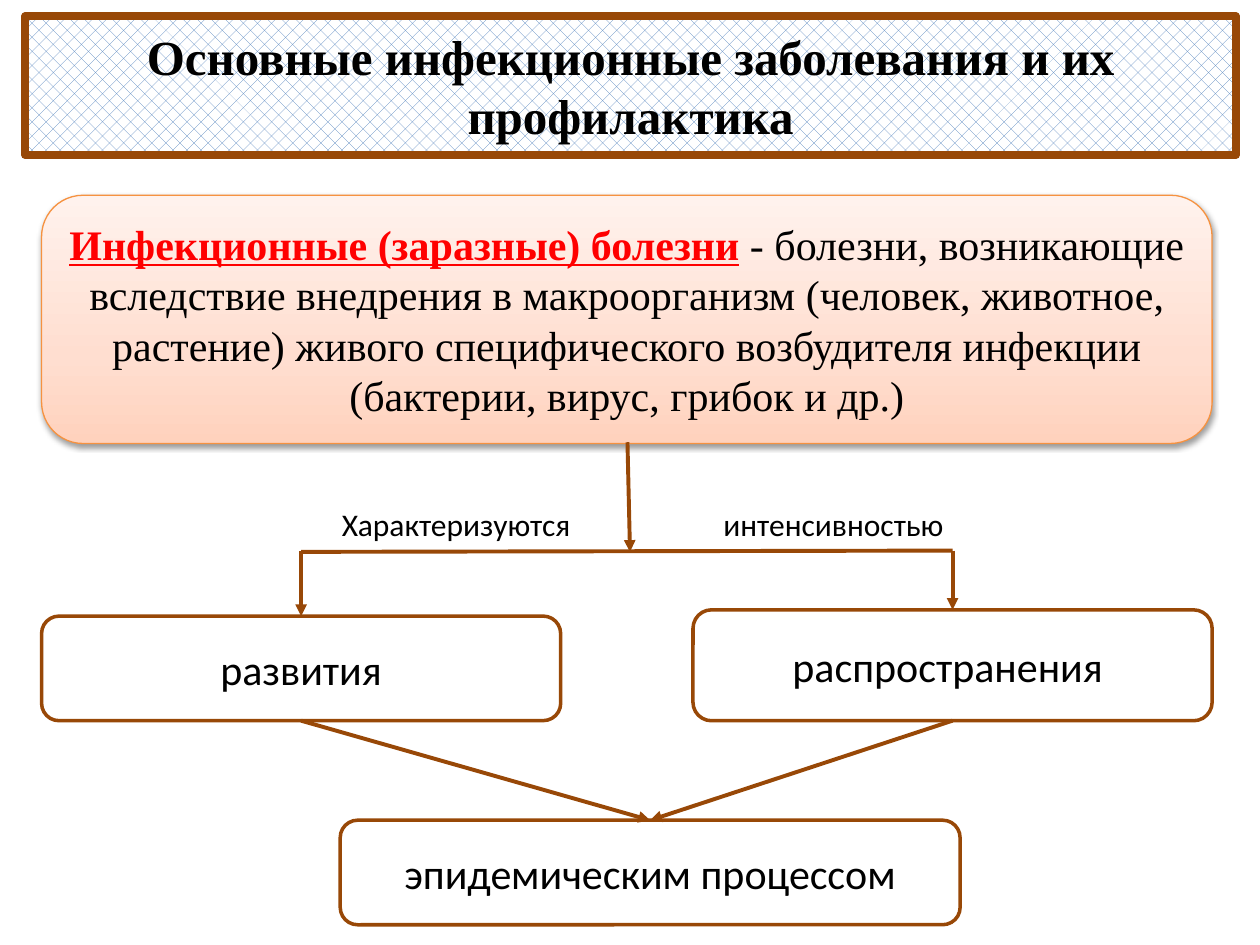
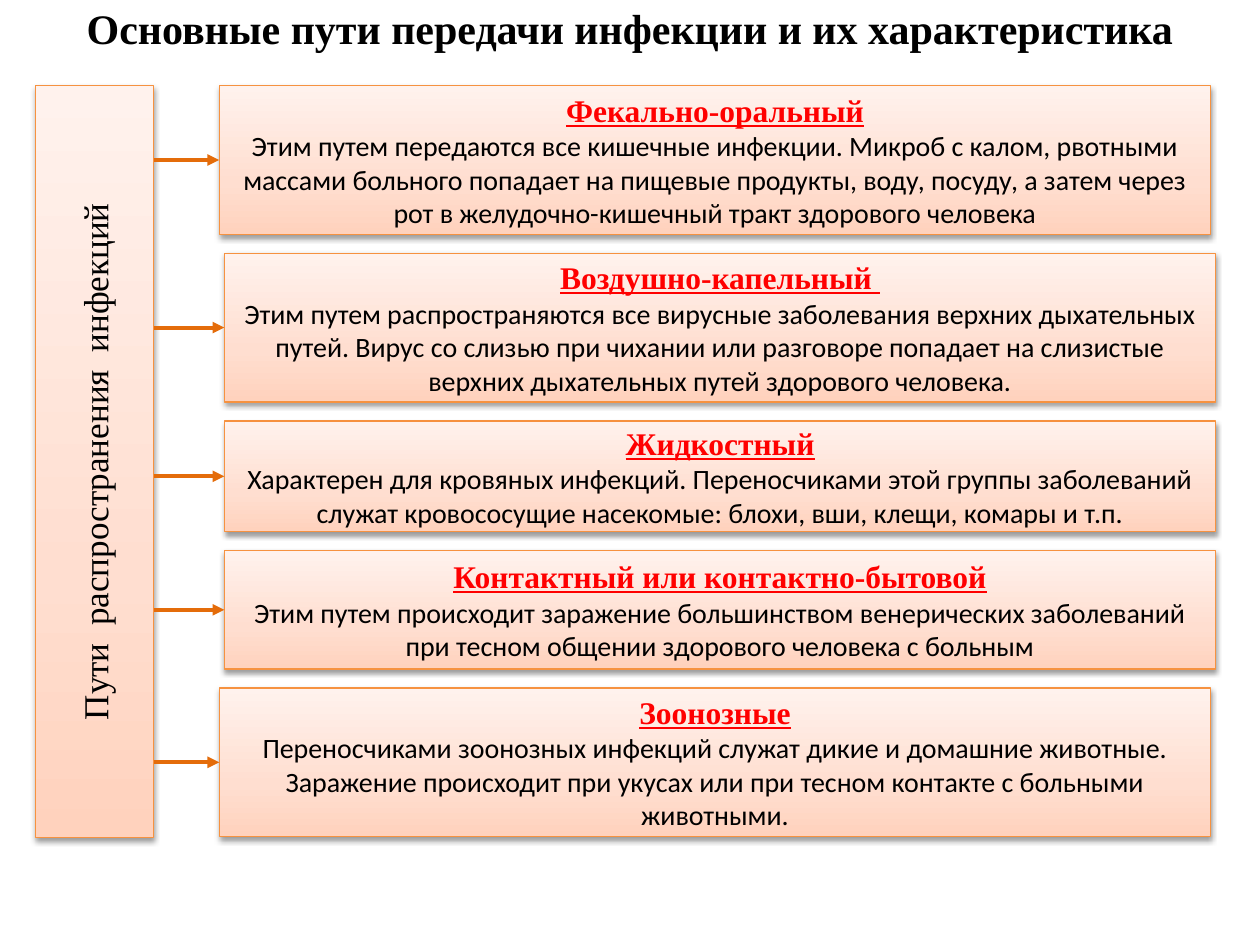
import copy
import pptx
import pptx.util
import pptx.dml.color
import pptx.enum.dml
import pptx.enum.shapes
import pptx.enum.text
import pptx.oxml
import pptx.oxml.ns

Inches = pptx.util.Inches
Pt = pptx.util.Pt
RGBColor = pptx.dml.color.RGBColor
Shape = pptx.enum.shapes.MSO_SHAPE
MIDDLE = pptx.enum.text.MSO_ANCHOR.MIDDLE
qn = pptx.oxml.ns.qn
NS = pptx.oxml.ns.nsdecls("a")

BLACK = RGBColor(0x00, 0x00, 0x00)
WHITE = RGBColor(0xFF, 0xFF, 0xFF)
RED = RGBColor(0xFF, 0x00, 0x00)
BLUE = RGBColor(0x4F, 0x81, 0xBD)
BROWN = RGBColor(0x98, 0x48, 0x07)
AMBER = RGBColor(0xE4, 0x6C, 0x0A)
EDGE = RGBColor(0xF6, 0x92, 0x40)
BLEND = [
    (0, RGBColor(0xFF, 0xD2, 0xBD)),
    (0.35, RGBColor(0xFF, 0xDE, 0xD0)),
    (1, RGBColor(0xFF, 0xF2, 0xED)),
]
SERIF = "Times New Roman"
SANS = "Calibri"
SHADOW = (
    f'<a:outerShdw {NS} blurRad="40000" dist="20000" dir="5400000" rotWithShape="0">'
    '<a:srgbClr val="000000"><a:alpha val="38000"/></a:srgbClr></a:outerShdw>'
)


def style(para, size, face, color=BLACK, bold=False, under=False):
    para.alignment = pptx.enum.text.PP_ALIGN.CENTER
    for run in para.runs:
        run.font.size = Pt(size)
        run.font.name = face
        run.font.color.rgb = color
        run.font.bold = bold
        run.font.underline = under


def panel(slide, kind, x, y, w, h, text):
    shape = slide.shapes.add_shape(kind, Inches(x), Inches(y), Inches(w), Inches(h))
    shape.fill.gradient()
    shape.fill.gradient_angle = 90
    props = shape._element.spPr
    stop = props.find(".//" + qn("a:gs"))
    stop.addnext(copy.deepcopy(stop))
    for stop, (place, color) in zip(shape.fill.gradient_stops, BLEND):
        stop.position = place
        stop.color.rgb = color
    shape.line.color.rgb = EDGE
    shape.line.width = Pt(0.75)
    shape.shadow.inherit = False
    props.find(qn("a:effectLst")).append(pptx.oxml.parse_xml(SHADOW))
    shape.text_frame.text = text
    shape.text_frame.vertical_anchor = MIDDLE
    return shape.text_frame


deck = pptx.Presentation()
deck.slide_width = Inches(10)
deck.slide_height = Inches(7.5)
titles = [
    ("Основные инфекционные заболевания и их профилактика", 28, 0.2, 0.13, 9.61, 1.1),
    ("Основные пути передачи инфекции и их характеристика", 24, 0, 0, 10, 0.44),
]
for text, size, x, y, w, h in titles:
    title = deck.slides.add_slide(deck.slide_layouts[5]).shapes.title
    title.left, title.top = Inches(x), Inches(y)
    title.width, title.height = Inches(w), Inches(h)
    title.text_frame.text = text
    title.text_frame.auto_size = pptx.enum.text.MSO_AUTO_SIZE.NONE
    title.text_frame.vertical_anchor = MIDDLE
    style(title.text_frame.paragraphs[0], size, SERIF, bold=True)
first, second = deck.slides

band = first.shapes.title
band._element.spPr.append(
    pptx.oxml.parse_xml(f'<a:prstGeom {NS} prst="roundRect"><a:avLst/></a:prstGeom>')
)
band.fill.patterned()
band.fill.pattern = pptx.enum.dml.MSO_PATTERN.PERCENT_25
band.fill.fore_color.rgb = BLUE
band.fill.back_color.rgb = WHITE
band.line.color.rgb = BROWN
band.line.width = Pt(4.5)

frame = panel(first, Shape.ROUNDED_RECTANGLE, 0.33, 1.55, 9.29, 1.97, "Инфекционные (заразные) болезни")
para = frame.paragraphs[0]
para.add_run().text = (
    " - болезни, возникающие вследствие внедрения в макроорганизм "
    "(человек, животное, растение) живого специфического возбудителя инфекции "
    "(бактерии, вирус, грибок и др.)"
)
style(para, 24, SERIF)
term = para.runs[0].font
term.color.rgb = RED
term.bold = term.underline = True

boxes = [
    ("развития", 0.33, 4.89, 4.12, 0.83),
    ("распространения ", 5.5, 4.84, 4.12, 0.88),
    ("эпидемическим процессом", 2.7, 6.51, 4.92, 0.83),
]
for text, x, y, w, h in boxes:
    box = first.shapes.add_shape(
        Shape.ROUNDED_RECTANGLE, Inches(x), Inches(y), Inches(w), Inches(h)
    )
    box.shadow.inherit = False
    box.fill.background()
    box.line.color.rgb = BROWN
    box.line.width = Pt(2)
    box.text_frame.text = text
    box.text_frame.vertical_anchor = MIDDLE
    style(box.text_frame.paragraphs[0], 24, SANS)

labels = [
    ("Характеризуются", 1.61, 3.94, 4.02, 0.43),
    ("интенсивностью", 5.16, 3.95, 2.91, 0.42),
]
for text, x, y, w, h in labels:
    label = first.shapes.add_textbox(Inches(x), Inches(y), Inches(w), Inches(h))
    label.text_frame.word_wrap = True
    label.text_frame.text = text
    label.text_frame.vertical_anchor = MIDDLE
    style(label.text_frame.paragraphs[0], 18, SANS)

lines = [
    (first, BROWN, 4.98, 3.51, 5, 4.38, True),
    (first, BROWN, 2.39, 4.38, 7.56, 4.37, False),
    (first, BROWN, 2.39, 4.37, 2.39, 4.89, True),
    (first, BROWN, 7.56, 4.37, 7.56, 4.84, True),
    (first, BROWN, 2.39, 5.72, 5.16, 6.51, True),
    (first, BROWN, 7.56, 5.72, 5.16, 6.51, True),
]

side = panel(second, Shape.RECTANGLE, 0.28, 0.68, 0.94, 5.97, "Пути  распространения  инфекций")
side._txBody.bodyPr.set("vert", "vert270")
style(side.paragraphs[0], 20, SERIF)

routes = [
    (1.74, 1.18, "Фекально-оральный",
     "Этим путем передаются все кишечные инфекции. Микроб с калом, рвотными массами больного "
     "попадает на пищевые продукты, воду, посуду, а затем через рот в желудочно-кишечный тракт "
     "здорового человека"),
    (1.78, 1.18, "Воздушно-капельный ",
     "Этим путем распространяются все вирусные заболевания верхних дыхательных путей. Вирус со "
     "слизью при чихании или разговоре попадает на слизистые верхних дыхательных путей "
     "здорового человека."),
    (1.78, 0.88, "Жидкостный",
     "Характерен для кровяных инфекций. Переносчиками этой группы заболеваний служат "
     "кровососущие насекомые: блохи, вши, клещи, комары и т.п."),
    (1.78, 0.94, "Контактный или контактно-бытовой",
     "Этим путем происходит заражение большинством венерических заболеваний при тесном общении "
     "здорового человека с больным"),
    (1.74, 1.18, "Зоонозные",
     "Переносчиками зоонозных инфекций служат дикие и домашние животные. Заражение происходит "
     "при укусах или при тесном контакте с больными животными."),
]
top = 0.68
for x, h, name, text in routes:
    frame = panel(second, Shape.RECTANGLE, x, top, 7.87, h, name + "\n" + text)
    style(frame.paragraphs[0], 18, SERIF, RED, True, True)
    style(frame.paragraphs[1], 16, SANS)
    mid = top + h / 2
    lines.append((second, AMBER, 1.22, mid, x, mid, True))
    top += h + 0.15

for slide, color, x1, y1, x2, y2, arrow in lines:
    line = slide.shapes.add_connector(
        pptx.enum.shapes.MSO_CONNECTOR.STRAIGHT, Inches(x1), Inches(y1), Inches(x2), Inches(y2)
    )
    line.line.color.rgb = color
    line.line.width = Pt(2.25)
    props = line._element.spPr
    if arrow:
        props.find(qn("a:ln")).append(pptx.oxml.parse_xml(f'<a:tailEnd {NS} type="triangle"/>'))
    props.append(pptx.oxml.parse_xml(f"<a:effectLst {NS}/>"))

deck.save("out.pptx")
